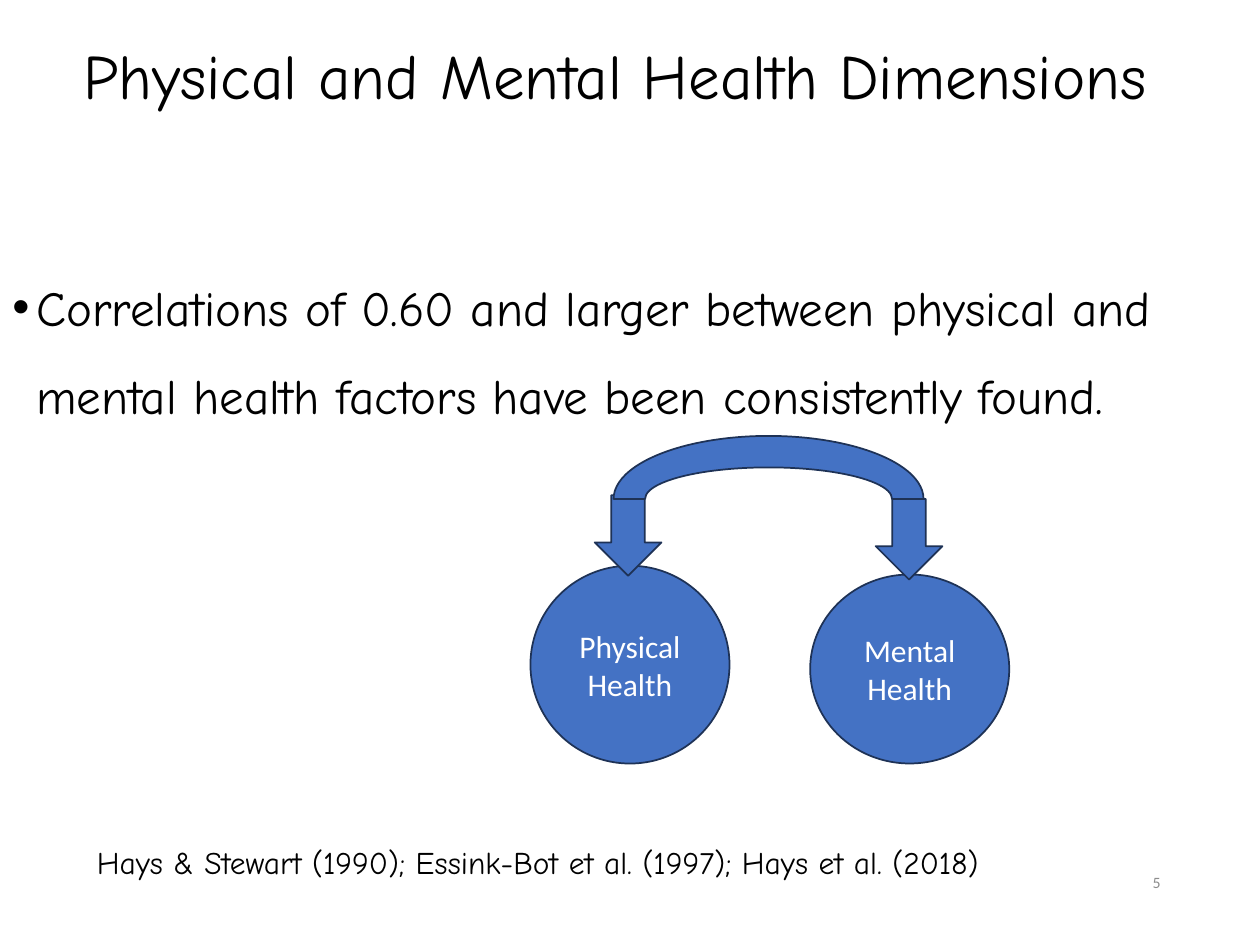
import dataclasses

import lxml.etree
import pptx
import pptx.dml.color
import pptx.enum.shapes
import pptx.enum.text
import pptx.oxml.ns
import pptx.util

RGB = pptx.dml.color.RGBColor
SHAPE = pptx.enum.shapes.MSO_SHAPE
ALIGN = pptx.enum.text.PP_ALIGN
ANCHOR = pptx.enum.text.MSO_ANCHOR

BLACK = RGB(0x00, 0x00, 0x00)
WHITE = RGB(0xFF, 0xFF, 0xFF)
GREY = RGB(0x8C, 0x8C, 0x8C)
BLUE = RGB(0x44, 0x72, 0xC4)
NAVY = RGB(0x1E, 0x32, 0x56)

HAND, SANS = "Comic Neue", "Calibri"
COLUMNS, ROWS = 100, 75  # grid laid over the slide

prs = pptx.Presentation()
prs.slide_width = pptx.util.Inches(10)
prs.slide_height = pptx.util.Inches(7.5)


@dataclasses.dataclass(frozen=True)
class Box:
    """A place on the grid, in columns and rows."""
    left: float
    top: float
    width: float
    height: float

    def emu(self) -> tuple[int, int, int, int]:
        col, row = prs.slide_width / COLUMNS, prs.slide_height / ROWS
        return (round(self.left * col), round(self.top * row),
                round(self.width * col), round(self.height * row))


@dataclasses.dataclass(frozen=True)
class Factor:
    """A health factor and the arrow that points to it."""
    lines: tuple[str, ...]
    circle: Box
    arrow: Box


def write(sp, *lines: str, size: float, font: str = HAND, color: RGB = BLACK,
          align=ALIGN.LEFT, anchor=ANCHOR.TOP, spacing: float = 1.0,
          before: float = 0, bullet: bool = False) -> None:
    tf = sp.text_frame
    tf.word_wrap = True
    tf.vertical_anchor = anchor
    for i, line in enumerate(lines):
        p = tf.add_paragraph() if i else tf.paragraphs[0]
        p.alignment, p.line_spacing = align, spacing
        p.space_before = pptx.util.Pt(before)
        if bullet:
            add_bullet(p)
        r = p.add_run()
        r.text = line
        r.font.name, r.font.size = font, pptx.util.Pt(size)
        r.font.color.rgb = color


def add_bullet(p) -> None:
    pr = p._p.get_or_add_pPr()
    indent = pptx.util.Inches(0.19)
    pr.set("marL", str(indent))
    pr.set("indent", str(-indent))
    qn = pptx.oxml.ns.qn
    lxml.etree.SubElement(pr, qn("a:buFont")).set("typeface", "Arial")
    lxml.etree.SubElement(pr, qn("a:buChar")).set("char", "•")


def add_text(s, box: Box, *lines: str, **style) -> None:
    write(s.shapes.add_textbox(*box.emu()), *lines, **style)


def add_blue_shape(s, kind, box: Box):
    sp = s.shapes.add_shape(kind, *box.emu())
    sp.shadow.inherit = False
    sp.fill.solid()
    sp.fill.fore_color.rgb = BLUE
    sp.line.color.rgb = NAVY
    sp.line.width = pptx.util.Pt(1)
    return sp


FACTORS = (
    Factor(("Physical", "Health"), Box(42.1, 44.9, 15.8, 15.7), Box(47.2, 39.3, 5.3, 6.4)),
    Factor(("Mental", "Health"), Box(64.3, 45.6, 15.8, 15), Box(69.5, 39.6, 5.3, 6.4)),
)


def main() -> None:
    s = prs.slides.add_slide(prs.slide_layouts[6])

    # Title, statement and page number
    add_text(s, Box(0, -1, 97.6, 14.5), "Physical and Mental Health Dimensions",
             size=36, align=ALIGN.CENTER, anchor=ANCHOR.MIDDLE, spacing=0.9)
    add_text(s, Box(0, 19.2, 101, 16),
             "Correlations of 0.60 and larger between physical and mental health "
             "factors have been consistently found.",
             size=28, spacing=1.5, before=7.5, bullet=True)
    add_text(s, Box(70.6, 68, 22.5, 4), "5", size=9, font=SANS, color=GREY,
             align=ALIGN.RIGHT, anchor=ANCHOR.MIDDLE)

    # Factors, then the arrows and the arc that joins them
    for factor in FACTORS:
        write(add_blue_shape(s, SHAPE.OVAL, factor.circle), *factor.lines,
              size=18, font=SANS, color=WHITE, align=ALIGN.CENTER, anchor=ANCHOR.MIDDLE)
    for factor in FACTORS:
        add_blue_shape(s, SHAPE.DOWN_ARROW, factor.arrow)
    add_blue_shape(s, SHAPE.BLOCK_ARC, Box(48.7, 34.6, 24.6, 10))

    # Sources
    add_text(s, Box(6.7, 66.4, 90, 4),
             "Hays & Stewart (1990); Essink-Bot et al. (1997); Hays et al. (2018)", size=18)

    prs.save("out.pptx")


if __name__ == "__main__":
    main()
